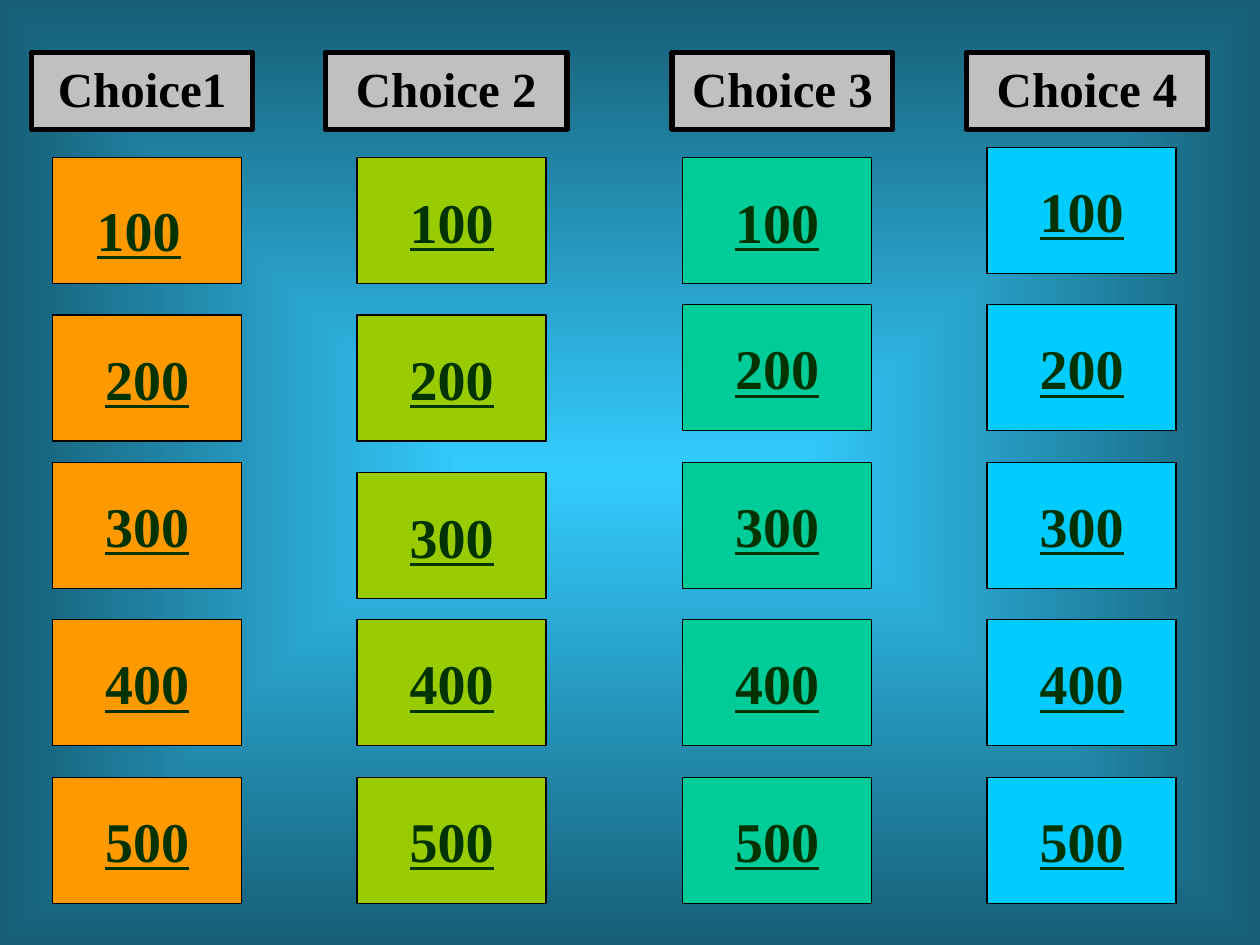
from lxml.etree import SubElement
from pptx import Presentation
from pptx.dml.color import RGBColor
from pptx.enum.shapes import MSO_SHAPE as Shape
from pptx.enum.text import MSO_ANCHOR as Anchor, PP_ALIGN as Align
from pptx.oxml.ns import qn
from pptx.util import Cm, Pt

COLORS = {
    "glow": "33CCFF", "edge": "175E76", "header": "C0C0C0", "ink": "000000",
    "score": "003300", "orange": "FF9900", "lime": "99CC00",
    "teal": "00CC99", "sky": "00CCFF",
}
CATEGORIES = [
    ("Choice1", "orange", 0.64, 4.45, 1.06),
    ("Choice 2", "lime", 6.56, 4.87, 7.2),
    ("Choice 3", "teal", 13.55, 4.45, 13.76),
    ("Choice 4", "sky", 19.48, 4.87, 19.9),
]
ROWS = [("100", 3.18), ("200", 6.35), ("300", 9.32), ("400", 12.49), ("500", 15.67)]
NUDGES = {
    ("Choice 2", "300"): 0.21, ("Choice 3", "200"): -0.21,
    ("Choice 4", "100"): -0.21, ("Choice 4", "200"): -0.21,
}


def rgb(name):
    """Return the named colour."""
    return RGBColor.from_string(COLORS[name])


def paint_background(slide):
    """Fill the background with a glow that darkens towards the edges."""
    fill = slide.background.fill
    fill.gradient()
    for stop, name, position in zip(fill.gradient_stops, ("glow", "edge"), (0, 1)):
        stop.color.rgb = rgb(name)
        stop.position = position
    gradient = next(slide.element.iter(qn("a:gradFill")))
    linear = gradient.find(qn("a:lin"))
    glow = SubElement(gradient, qn("a:path"), {"path": "shape"})
    SubElement(glow, qn("a:fillToRect"), {side: "50000" for side in "ltrb"})
    gradient.replace(linear, glow)


def write(box, text, size, color, align=Align.CENTER, underline=None):
    """Put one bold line of text in a box."""
    line = box.text_frame.paragraphs[0]
    line.text = text
    line.alignment = align
    font = line.font
    font.name, font.size, font.bold = "Times New Roman", Pt(size), True
    font.underline = underline
    font.color.rgb = rgb(color)


def add_panel(slide, kind, bounds, color, border):
    """Add a filled shape with a black border."""
    panel = slide.shapes.add_shape(kind, *map(Cm, bounds))
    panel.shadow.inherit = False
    panel.fill.solid()
    panel.fill.fore_color.rgb = rgb(color)
    panel.line.color.rgb = rgb("ink")
    panel.line.width = Pt(border)
    return panel


def add_header(slide, title, left, width):
    """Add the heading of a category."""
    header = add_panel(slide, Shape.RECTANGLE, (left, 1.06, width, 1.55), "header", 3)
    header.text_frame.vertical_anchor = Anchor.TOP
    write(header, title, 28, "ink")


def add_button(slide, left, top, color):
    """Add a blank score button."""
    bounds = (left, top, 3.81, 2.54)
    button = add_panel(slide, Shape.ACTION_BUTTON_CUSTOM, bounds, color, 0.75)
    button.text_frame.vertical_anchor = Anchor.MIDDLE
    button.text_frame.word_wrap = False
    return button


def add_score_label(slide, score):
    """Add the separate label that lies over the first button."""
    label = slide.shapes.add_textbox(Cm(1.7), Cm(3.81), Cm(2.34), Cm(1.6))
    label.text_frame.word_wrap = True
    write(label, score, 32, "score", Align.LEFT, True)


def main():
    """Build the score board."""
    deck = Presentation()
    deck.slide_width, deck.slide_height = Cm(25.4), Cm(19.05)
    slide = deck.slides.add_slide(deck.slide_layouts[6])
    paint_background(slide)
    labelled_apart = ("Choice1", "100")
    for title, color, header_left, header_width, button_left in CATEGORIES:
        add_header(slide, title, header_left, header_width)
        for score, top in ROWS:
            cell = (title, score)
            button = add_button(slide, button_left, top + NUDGES.get(cell, 0), color)
            if cell != labelled_apart:
                write(button, score, 32, "score", underline=True)
    add_score_label(slide, labelled_apart[1])
    deck.save("out.pptx")


if __name__ == "__main__":
    main()
